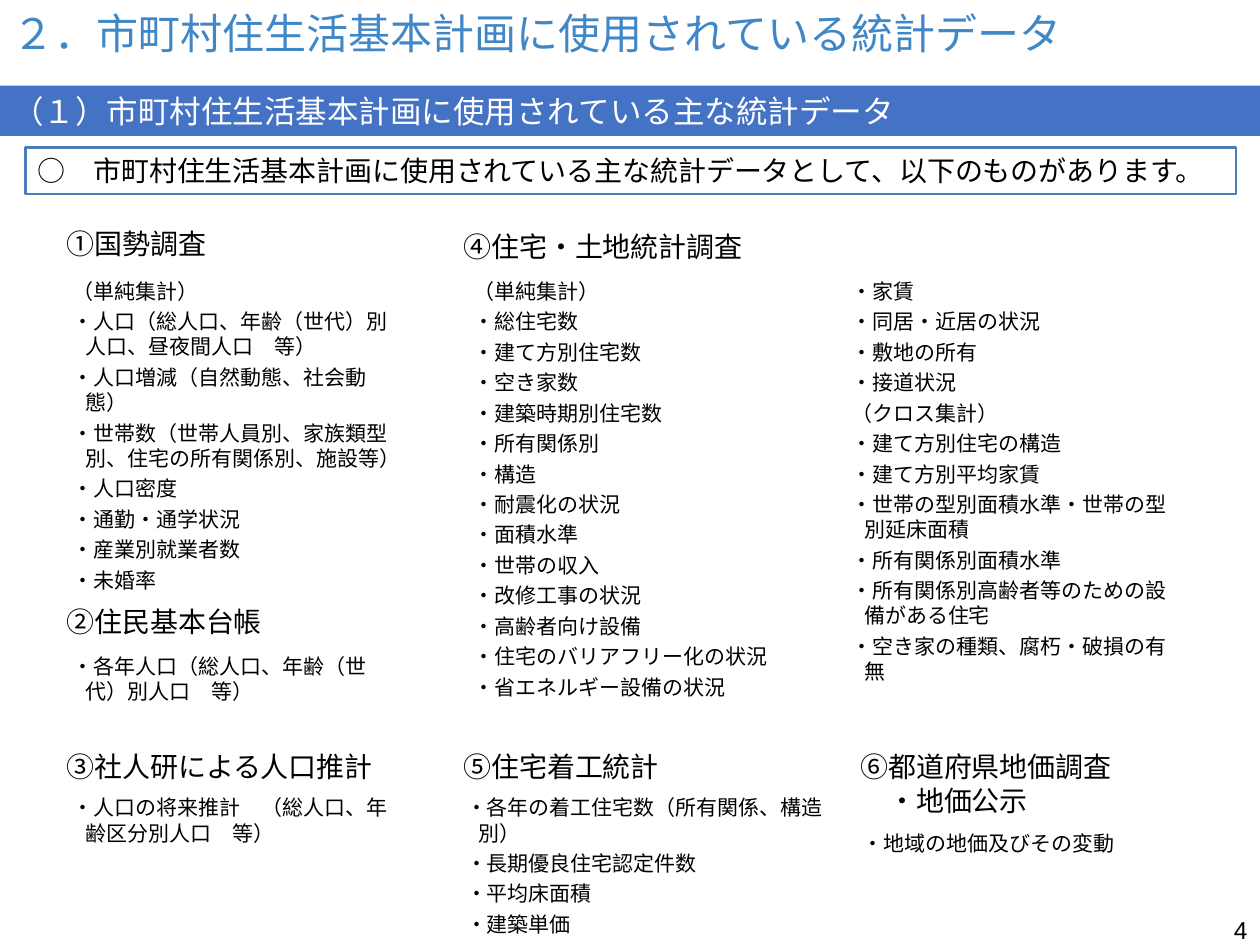
import dataclasses
import typing

import lxml.etree
import pptx
import pptx.dml.color
import pptx.enum.shapes
import pptx.enum.text
import pptx.oxml.ns
import pptx.util

WIDE, HIGH = 10, 7.5
CJK = "Noto Sans CJK JP"
BLACK, WHITE, BLUE = "000000", "FFFFFF", "4472C4"
LEFT = (0.43, 3.58, 6.73)
ROWS = (1.75, 4.75, 5.9)


@dataclasses.dataclass
class Style:
    """Hold the look of a text."""
    size: float
    font: str
    hue: str = BLACK
    gap: float = 0
    hang: float = 0
    align: typing.Any = pptx.enum.text.PP_ALIGN.LEFT


@dataclasses.dataclass
class Block:
    """Hold the place, lines and style of a text."""
    left: float
    top: float
    wide: float
    high: float
    lines: tuple[str, ...]
    style: Style


HEAD = Style(16, CJK)
LIST = Style(12, "Calibri", gap=3, hang=0.1)

BLOCKS = (
    Block(LEFT[0], ROWS[0], 2.68, 0.37, ("①国勢調査",), HEAD),
    Block(LEFT[0], ROWS[1], 2.68, 0.37, ("②住民基本台帳",), HEAD),
    Block(LEFT[0], ROWS[2], 2.68, 0.37, ("③社人研による人口推計",), HEAD),
    Block(LEFT[1], ROWS[0] + 0.02, 3.19, 0.37, ("④住宅・土地統計調査",), HEAD),
    Block(LEFT[1], ROWS[2], 2.91, 0.37, ("⑤住宅着工統計",), HEAD),
    Block(LEFT[2], ROWS[2], 2.76, 0.64, ("⑥都道府県地価調査", "　・地価公示"), HEAD),
    Block(0.48, 2.16, 2.82, 2.42, (
        "（単純集計）", "・人口（総人口、年齢（世代）別人口、昼夜間人口　等）",
        "・人口増減（自然動態、社会動態）",
        "・世帯数（世帯人員別、家族類型別、住宅の所有関係別、施設等）",
        "・人口密度", "・通勤・通学状況", "・産業別就業者数", "・未婚率"), LIST),
    Block(0.48, 5.14, 2.82, 0.5, ("・各年人口（総人口、年齢（世代）別人口　等）",), LIST),
    Block(0.48, 6.26, 2.82, 0.5, ("・人口の将来推計　（総人口、年齢区分別人口　等）",), LIST),
    Block(3.66, 2.16, 2.82, 3.48, (
        "（単純集計）", "・総住宅数", "・建て方別住宅数", "・空き家数",
        "・建築時期別住宅数", "・所有関係別", "・構造", "・耐震化の状況",
        "・面積水準", "・世帯の収入", "・改修工事の状況", "・高齢者向け設備",
        "・住宅のバリアフリー化の状況", "・省エネルギー設備の状況"), LIST),
    Block(6.66, 2.16, 2.82, 3.15, (
        "・家賃", "・同居・近居の状況", "・敷地の所有", "・接道状況",
        "（クロス集計）", "・建て方別住宅の構造", "・建て方別平均家賃",
        "・世帯の型別面積水準・世帯の型別延床面積", "・所有関係別面積水準",
        "・所有関係別高齢者等のための設備がある住宅",
        "・空き家の種類、腐朽・破損の有無"), LIST),
    Block(3.6, 6.26, 3.29, 1.04, (
        "・各年の着工住宅数（所有関係、構造別）", "・長期優良住宅認定件数",
        "・平均床面積", "・建築単価"), LIST),
    Block(6.75, 6.54, 3.06, 0.3, ("・地域の地価及びその変動",), LIST),
    Block(7.67, 7.21, 2.33, 0.29, ("4",),
          Style(14, "Arial", align=pptx.enum.text.PP_ALIGN.RIGHT)),
)
TITLE = Block(0, 0, 8.62, 0.52, ("２．市町村住生活基本計画に使用されている統計データ",),
              Style(24, CJK, "4087C8"))
BAND = Block(0, 0.68, WIDE, 0.4, ("（１）市町村住生活基本計画に使用されている主な統計データ",),
             Style(18, "Arial", WHITE))
LEAD = Block(0.2, 1.17, 9.61, 0.37,
             ("○　市町村住生活基本計画に使用されている主な統計データとして、以下のものがあります。",),
             Style(16, CJK, hang=0.16))


def tint(code: str) -> pptx.dml.color.RGBColor:
    """Turn a hex string into a colour."""
    return pptx.dml.color.RGBColor.from_string(code)


def place(block: Block) -> tuple[int, ...]:
    """Give the left, top, width and height of a block."""
    return tuple(pptx.util.Inches(n) for n in (block.left, block.top, block.wide, block.high))


def write(shape: typing.Any, block: Block, anchor: typing.Any) -> None:
    """Fill a shape with the lines of a block in its style."""
    frame, style = shape.text_frame, block.style
    frame.text = "\n".join(block.lines)
    frame.word_wrap = True
    frame.auto_size = pptx.enum.text.MSO_AUTO_SIZE.NONE
    frame.vertical_anchor = anchor
    for rank, para in enumerate(frame.paragraphs):
        para.alignment = style.align
        para.space_before = pptx.util.Pt(style.gap if rank else 0)
        if style.hang:
            props = para._p.get_or_add_pPr()
            props.set("marL", str(pptx.util.Inches(style.hang)))
            props.set("indent", str(-pptx.util.Inches(style.hang)))
        for run in para.runs:
            run.font.size = pptx.util.Pt(style.size)
            run.font.name = style.font
            run.font.color.rgb = tint(style.hue)
            east = lxml.etree.SubElement(run._r.rPr, pptx.oxml.ns.qn("a:ea"))
            east.set("typeface", style.font)
            run._r.rPr.find(pptx.oxml.ns.qn("a:latin")).addnext(east)


def panel(slide: typing.Any, block: Block, anchor: typing.Any,
          fill: str = "", line: str = "") -> None:
    """Draw a box with text, filled or outlined."""
    kind = pptx.enum.shapes.MSO_SHAPE.RECTANGLE
    shape = slide.shapes.add_shape(kind, *place(block))
    shape.shadow.inherit = False
    if fill:
        shape.fill.solid()
        shape.fill.fore_color.rgb = tint(fill)
    else:
        shape.fill.background()
    if line:
        shape.line.color.rgb = tint(line)
        shape.line.width = pptx.util.Pt(1.5)
    else:
        shape.line.fill.background()
    write(shape, block, anchor)


def main() -> None:
    """Build the slide and save it."""
    deck = pptx.Presentation()
    deck.slide_width, deck.slide_height = pptx.util.Inches(WIDE), pptx.util.Inches(HIGH)
    slide = deck.slides.add_slide(deck.slide_layouts[5])
    top, mid = pptx.enum.text.MSO_ANCHOR.TOP, pptx.enum.text.MSO_ANCHOR.MIDDLE
    title = slide.shapes.title
    title.left, title.top, title.width, title.height = place(TITLE)
    write(title, TITLE, mid)
    panel(slide, LEAD, top, line="4A7EBB")
    panel(slide, BAND, mid, fill=BLUE)
    for block in BLOCKS:
        write(slide.shapes.add_textbox(*place(block)), block, top)
    deck.save("out.pptx")


if __name__ == "__main__":
    main()
